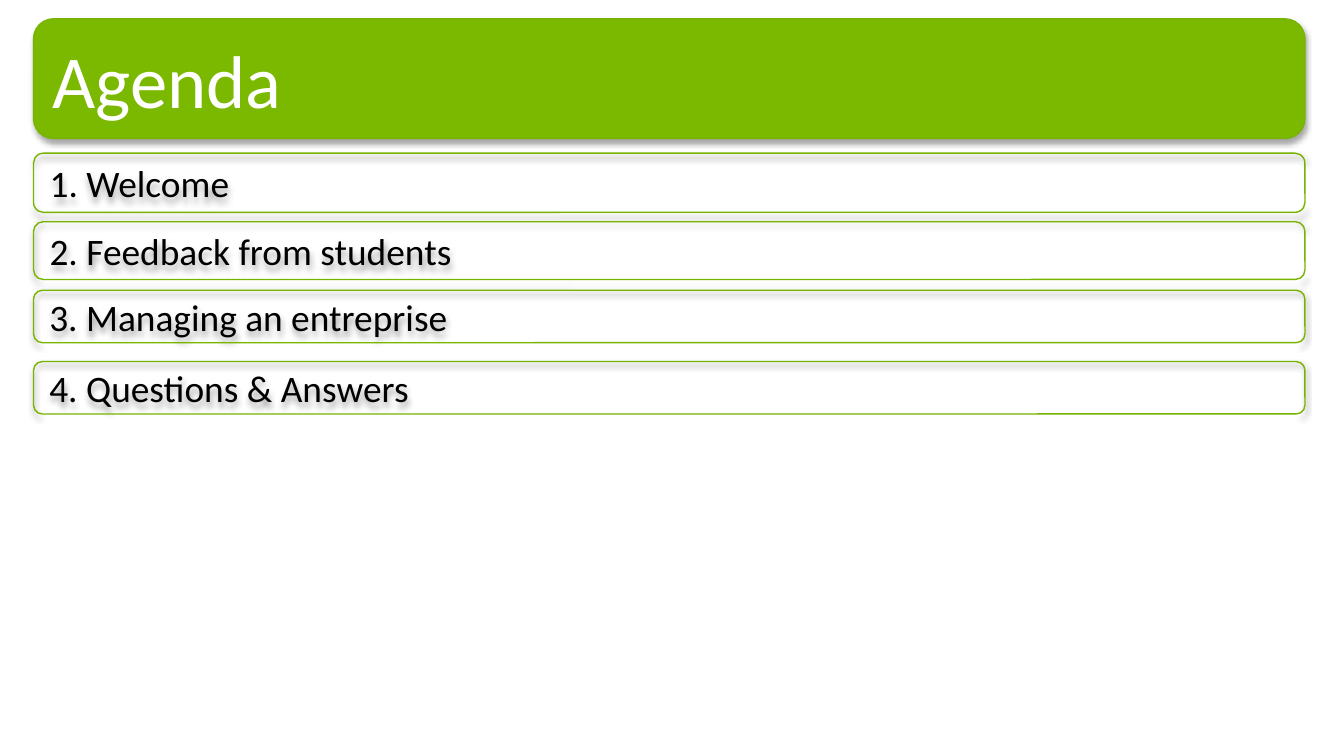
from lxml import etree
from pptx import Presentation, util as u
from pptx.dml.color import RGBColor
from pptx.enum import shapes, text
from pptx.oxml.ns import qn

COLORS = {"banner": "7BB800", "outline": "76B400", "title": "FFFFFF",
          "item": "000000", "shadow": "000000"}

# Widescreen 16:9 slide
prs = Presentation()
prs.slide_width = u.Inches(10)
prs.slide_height = prs.slide_width * 9 // 16
s = prs.slides.add_slide(prs.slide_layouts[6])

# Shared column for the banner and the agenda rows
LEFT, WIDTH = u.Inches(0.25), u.Inches(9.46)


def add_box(top, height, label, size, color):
    """Rounded box with outline, soft shadow and left-aligned text."""
    sp = s.shapes.add_shape(shapes.MSO_SHAPE.ROUNDED_RECTANGLE,
                            LEFT, u.Inches(top), WIDTH, u.Inches(height))
    sp.fill.background()
    sp.line.color.rgb = RGBColor.from_string(COLORS["outline"])
    sp.line.width = u.Pt(0.75)
    sp.shadow.inherit = False
    effects = sp._element.spPr.find(qn("a:effectLst"))
    shadow = etree.SubElement(effects, qn("a:outerShdw"), blurRad=str(u.Pt(3.1)),
                              dist=str(u.Pt(1.8)), dir="5400000", rotWithShape="0")
    clr = etree.SubElement(shadow, qn("a:srgbClr"), val=COLORS["shadow"])
    etree.SubElement(clr, qn("a:alpha"), val="35000")

    tf = sp.text_frame
    tf.text = label
    tf.word_wrap = True
    tf.vertical_anchor = text.MSO_ANCHOR.MIDDLE
    p = tf.paragraphs[0]
    p.alignment = text.PP_ALIGN.LEFT
    r = p.runs[0]
    r.font.name, r.font.size = "Calibri", u.Pt(size)
    r.font.color.rgb = RGBColor.from_string(COLORS[color])
    return sp


# Title banner
banner = add_box(0.14, 0.89, "Agenda", 40, "title")
banner.fill.solid()
banner.fill.fore_color.rgb = RGBColor.from_string(COLORS["banner"])

# Agenda rows: top, height, label
rows = [(1.14, 0.44, "Welcome"),
        (1.65, 0.43, "Feedback from students"),
        (2.16, 0.39, "Managing an entreprise"),
        (2.69, 0.39, "Questions & Answers")]
for number, (top, height, label) in enumerate(rows, 1):
    add_box(top, height, f"{number}. {label}", 20, "item")

prs.save("out.pptx")
